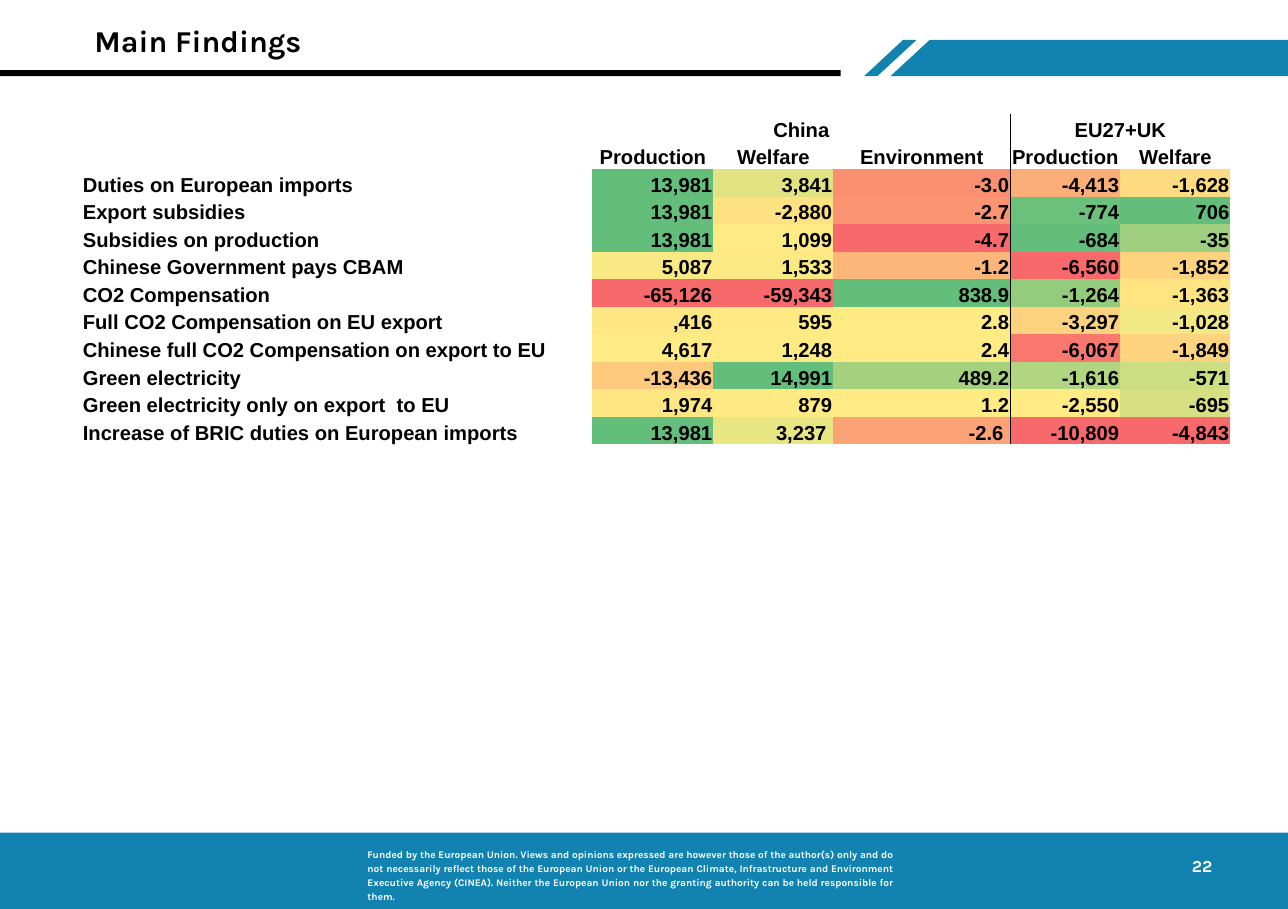
from dataclasses import dataclass
from typing import NamedTuple

from lxml.etree import SubElement
from pptx import Presentation
from pptx.dml.color import RGBColor as RGB
from pptx.enum.shapes import MSO_SHAPE as SHAPE
from pptx.enum.text import MSO_ANCHOR as ANCHOR, PP_ALIGN as ALIGN
from pptx.oxml import parse_xml
from pptx.oxml.ns import nsdecls, qn
from pptx.util import Pt


@dataclass(frozen=True)
class Theme:
    blue: str = "1283B1"
    black: str = "000000"
    white: str = "FFFFFF"
    brand_font: str = "Karla"
    table_font: str = "Arial"
    title: float = 18
    table: float = 12
    number: float = 10
    footer: float = 6


class Finding(NamedTuple):
    label: str
    values: tuple[str, ...]
    fills: str


class TextBox(NamedTuple):
    text: str
    box: tuple[float, float, float, float]
    size: float
    color: str
    align: ALIGN = ALIGN.LEFT
    spacing: float = 1.0
    anchor: ANCHOR = ANCHOR.TOP
    insets: tuple[float, float] = (7.2, 3.6)
    wrap: bool = True


T = Theme()
WIDTH, HEIGHT = 765, 540
BAND_TOP, BAND_BOTTOM = 23.76, 45.2
FOOTER_TOP = 494.64
NO_TABLE_STYLE = "{2D5ABB26-0587-4C30-8999-92F81FD0307C}"

# Freeform outlines of the header decoration
HEADER_OUTLINES = [
    [(513.3, BAND_BOTTOM), (536.4, BAND_TOP), (544.4, BAND_TOP), (521.2, BAND_BOTTOM)],
    [(529, BAND_BOTTOM), (552.2, BAND_TOP), (WIDTH, BAND_TOP), (WIDTH, BAND_BOTTOM)],
]

TEXTS = [
    TextBox("Funded by the European Union. Views and opinions expressed are however those "
            "of the author(s) only and do not necessarily reflect those of the European "
            "Union or the European Climate, Infrastructure and Environment Executive "
            "Agency (CINEA). Neither the European Union nor the granting authority can be "
            "held responsible for them.",
            (211.2, 499.7, 326.2, 40.3), T.footer, T.white, ALIGN.JUSTIFY, 1.15),
    TextBox("22", (702.7, 504.7, 20.9, 19.4), T.number, T.white, ALIGN.RIGHT,
            anchor=ANCHOR.MIDDLE, insets=(3.6, 3.6), wrap=False),
    TextBox("Main Findings", (49, 9.4, 464.4, 34.6), T.title, T.black),
]

# Table content
TABLE_LEFT, TABLE_TOP, ROW_HEIGHT = 48.5, 67.7, 16.38
COLUMNS = [303.4, 71.9, 71.2, 105.1, 65.4, 65.4]
GROUPS = {"China": (1, 3), "EU27+UK": (4, 5)}
SIDES = ("lnL", "lnR", "lnT", "lnB")
DIVIDER = {3: "lnR", 4: "lnL"}
HEADINGS = ["", "Production", "Welfare", "Environment", "Production", "Welfare"]
FINDINGS = [
    Finding("Duties on European imports",
            ("13,981", "3,841", "-3.0", "-4,413", "-1,628"),
            "63BE7B E1E383 FA8F72 FBAE78 FEDB81"),
    Finding("Export subsidies",
            ("13,981", "-2,880", "-2.7", "-774", "706"),
            "63BE7B FEE282 FA9473 6BC17C 63BE7B"),
    Finding("Subsidies on production",
            ("13,981", "1,099", "-4.7", "-684", "-35"),
            "63BE7B FFEB84 F8696B 63BE7B A0D07F"),
    Finding("Chinese Government pays CBAM",
            ("5,087", "1,533", "-1.2", "-6,560", "-1,852"),
            "F8E984 FBEA84 FCB679 F8696B FDD37F"),
    Finding("CO2 Compensation",
            ("-65,126", "-59,343", "838.9", "-1,264", "-1,363"),
            "F8696B F8696B 63BE7B 94CC7E FEE582"),
    Finding("Full CO2 Compensation on EU export",
            (",416", "595", "2.8", "-3,297", "-1,028"),
            "FEE683 FEE983 FFEB84 FDD27F F2E884"),
    Finding("Chinese full CO2 Compensation on export to EU",
            ("4,617", "1,248", "2.4", "-6,067", "-1,849"),
            "FFEB84 FEEB84 FFEB84 F8786E FDD37F"),
    Finding("Green electricity",
            ("-13,436", "14,991", "489.2", "-1,616", "-571"),
            "FDC97D 63BE7B A5D17F B1D580 CCDD82"),
    Finding("Green electricity only on export  to EU",
            ("1,974", "879", "1.2", "-2,550", "-695"),
            "FEE683 FEEA83 FFEB84 FFEB84 D6E082"),
    Finding("Increase of BRIC duties on European imports",
            ("13,981", "3,237 ", "-2.6 ", "-10,809", "-4,843"),
            "63BE7B E8E583 FBA376 F8696B F8696B"),
]


def write(tf, text: str, *, size: float, color: str, font: str,
          align: ALIGN = ALIGN.LEFT, spacing: float = 1.0) -> None:
    p = tf.paragraphs[0]
    p.alignment, p.line_spacing = align, spacing
    if not text:  # an empty cell keeps its row low through the end mark's size
        SubElement(p._p, qn("a:endParaRPr"), sz=str(int(size * 100)))
        return
    r = p.add_run()
    r.text = text
    r.font.size, r.font.name, r.font.bold = Pt(size), font, True
    r.font.color.rgb = RGB.from_string(color)


def paint(sp, color: str) -> None:
    sp.shadow.inherit = False
    sp.fill.solid()
    sp.fill.fore_color.rgb = RGB.from_string(color)
    sp.line.fill.background()


def add_bar(s, top: float, width: float, height: float, color: str) -> None:
    paint(s.shapes.add_shape(SHAPE.RECTANGLE, Pt(0), Pt(top), Pt(width), Pt(height)), color)


def add_outline(s, points: list[tuple[float, float]], color: str) -> None:
    start, *rest = [(Pt(x), Pt(y)) for x, y in points]
    builder = s.shapes.build_freeform(*start)
    builder.add_line_segments(rest, close=True)
    paint(builder.convert_to_shape(), color)


def add_text(s, t: TextBox) -> None:
    tf = s.shapes.add_textbox(*map(Pt, t.box)).text_frame
    tf.word_wrap, tf.vertical_anchor = t.wrap, t.anchor
    tf.margin_left = tf.margin_right = Pt(t.insets[0])
    tf.margin_top = tf.margin_bottom = Pt(t.insets[1])
    write(tf, t.text, size=t.size, color=t.color, font=T.brand_font,
          align=t.align, spacing=t.spacing)


def set_borders(cell, ruled: str | None) -> None:
    """Rule one side of the cell and clear the others."""
    solid = f'<a:solidFill><a:srgbClr val="{T.black}"/></a:solidFill>'
    for i, side in enumerate(SIDES):
        fill = solid if side == ruled else "<a:noFill/>"
        line = parse_xml(f'<a:{side} {nsdecls("a")} w="{Pt(1)}">{fill}</a:{side}>')
        cell._tc.get_or_add_tcPr().insert(i, line)


def fill_cell(cell, text: str, fill: str, align: ALIGN, ruled: str | None) -> None:
    cell.margin_left = cell.margin_right = cell.margin_top = Pt(0.72)
    cell.margin_bottom = Pt(0)
    cell.vertical_anchor = ANCHOR.BOTTOM
    cell.fill.solid()
    cell.fill.fore_color.rgb = RGB.from_string(fill)
    write(cell.text_frame, text, size=T.table, color=T.black, font=T.table_font, align=align)
    set_borders(cell, ruled)


def add_findings(s) -> None:
    rows = len(FINDINGS) + 2
    table = s.shapes.add_table(rows, len(COLUMNS), Pt(TABLE_LEFT), Pt(TABLE_TOP),
                               Pt(sum(COLUMNS)), Pt(rows * ROW_HEIGHT)).table
    table.first_row = table.horz_banding = False
    table._tbl.tblPr.find(qn("a:tableStyleId")).text = NO_TABLE_STYLE
    for column, width in zip(table.columns, COLUMNS):
        column.width = Pt(width)
    for row in table.rows:
        row.height = Pt(ROW_HEIGHT)

    # Two heading rows, then one row per finding
    group_row = [""] * len(COLUMNS)
    for name, (first, last) in GROUPS.items():
        group_row[first] = name
        table.cell(0, first).merge(table.cell(0, last))
    grid = [group_row, HEADINGS] + [[f.label, *f.values] for f in FINDINGS]
    plain = [T.white] * len(COLUMNS)
    fills = [plain, plain] + [[T.white, *f.fills.split()] for f in FINDINGS]
    for i, texts in enumerate(grid):
        for j, text in enumerate(texts):
            align = ALIGN.CENTER if i < 2 else ALIGN.RIGHT if j else ALIGN.LEFT
            # The merged China heading carries the divider on its first cell
            ruled = "lnR" if (i, j) == (0, 1) else DIVIDER.get(j)
            fill_cell(table.cell(i, j), text, fills[i][j], align, ruled)


def main() -> None:
    prs = Presentation()
    prs.slide_width, prs.slide_height = Pt(WIDTH), Pt(HEIGHT)
    s = prs.slides.add_slide(prs.slide_layouts[6])

    # Header and footer bands
    for points in HEADER_OUTLINES:
        add_outline(s, points, T.blue)
    add_bar(s, 41.6, 499.3, BAND_BOTTOM - 41.6, T.black)
    add_bar(s, FOOTER_TOP, WIDTH, HEIGHT - FOOTER_TOP, T.blue)

    # Title, page number and disclaimer
    for t in TEXTS:
        add_text(s, t)

    add_findings(s)
    prs.save("out.pptx")


if __name__ == "__main__":
    main()
